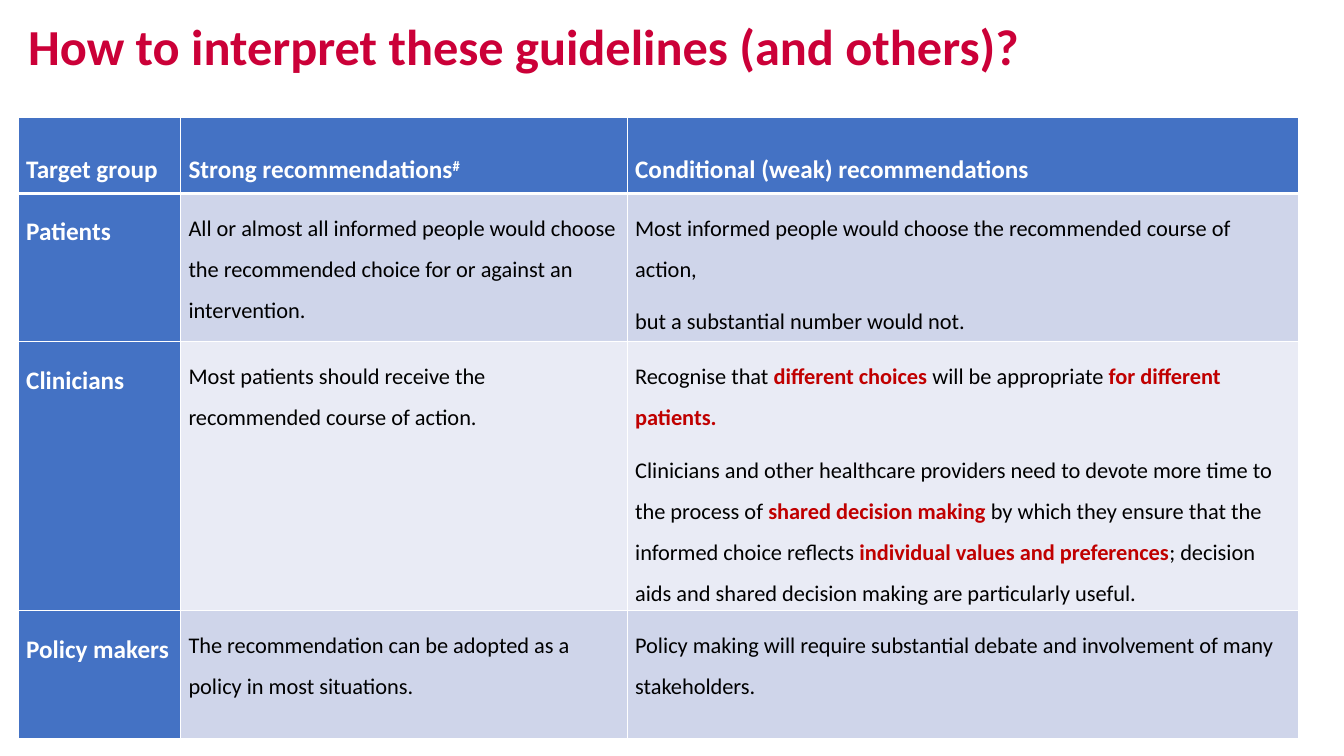
from dataclasses import dataclass

from lxml.etree import SubElement
from pptx import Presentation
from pptx.dml.color import RGBColor
from pptx.enum.text import MSO_ANCHOR
from pptx.oxml.ns import qn
from pptx.slide import Slide
from pptx.table import Table, _Cell
from pptx.text.text import _Paragraph
from pptx.util import Inches, Pt


@dataclass(frozen=True)
class Theme:
    font: str = "Calibri"
    title_size: int = 36
    label_size: int = 18
    body_size: int = 16
    title: str = "CB0038"
    label: str = "FFFFFF"
    body: str = "000000"
    emphasis: str = "C00000"
    heading_fill: str = "4472C4"
    bands: tuple[str, str] = ("CFD5EA", "E9EBF5")
    border: str = "FFFFFF"
    border_width: float = 1
    header_rule: float = 3


@dataclass(frozen=True)
class Span:
    text: str
    strong: bool = False
    raised: bool = False


@dataclass(frozen=True)
class Row:
    height: float
    group: list[list[Span]]
    strong: list[list[Span]]
    conditional: list[list[Span]]


THEME = Theme()
COLUMN_WIDTHS = (1.61, 4.43, 6.66)
CELL_INSET = 0.08


def plain(*texts: str) -> list[list[Span]]:
    return [[Span(text)] for text in texts]


ROWS = [
    Row(
        0.76,
        plain("Target group"),
        [[Span("Strong recommendations"), Span("#", raised=True)]],
        plain("Conditional (weak) recommendations"),
    ),
    Row(
        1.27,
        plain("Patients"),
        plain("All or almost all informed people would choose the recommended "
              "choice for or against an intervention."),
        plain("Most informed people would choose the recommended course of action,",
              "but a substantial number would not."),
    ),
    Row(
        2.29,
        plain("Clinicians"),
        plain("Most patients should receive the recommended course of action."),
        [
            [
                Span("Recognise that "),
                Span("different choices ", strong=True),
                Span("will be appropriate "),
                Span("for different patients.", strong=True),
            ],
            [
                Span("Clinicians and other healthcare providers need to devote "
                     "more time to the process of "),
                Span("shared decision making ", strong=True),
                Span("by which they ensure that the informed choice reflects "),
                Span("individual values and preferences", strong=True),
                Span("; decision aids and shared decision making are "
                     "particularly useful."),
            ],
        ],
    ),
    Row(
        1.27,
        plain("Policy makers"),
        plain("The recommendation can be adopted as a policy in most situations."),
        plain("Policy making will require substantial debate and involvement of "
              "many stakeholders."),
    ),
]


def set_font(paragraph: _Paragraph, size: int, color: str, bold: bool) -> None:
    font = paragraph.font
    font.name = THEME.font
    font.size = Pt(size)
    font.bold = bold
    font.color.rgb = RGBColor.from_string(color)


def add_title(page: Slide, text: str) -> None:
    box = page.shapes.add_textbox(Inches(0.18), Inches(0.11), Inches(11.25), Inches(0.76))
    frame = box.text_frame
    frame.word_wrap = True
    frame.vertical_anchor = MSO_ANCHOR.MIDDLE
    paragraph = frame.paragraphs[0]
    paragraph.text = text
    paragraph.line_spacing = 0.9
    set_font(paragraph, THEME.title_size, THEME.title, True)


def set_borders(cell: _Cell, top: float, bottom: float) -> None:
    properties = cell._tc.get_or_add_tcPr()
    side = THEME.border_width
    for tag, width in (("lnL", side), ("lnR", side), ("lnT", top), ("lnB", bottom)):
        line = SubElement(properties, qn(f"a:{tag}"), w=str(Pt(width)))
        fill = SubElement(line, qn("a:solidFill"))
        SubElement(fill, qn("a:srgbClr"), val=THEME.border)


def write_cell(cell: _Cell, paragraphs: list[list[Span]], heading: bool) -> None:
    frame = cell.text_frame
    for index, spans in enumerate(paragraphs):
        paragraph = frame.add_paragraph() if index else frame.paragraphs[0]
        paragraph.line_spacing = 1.5
        paragraph.space_after = Pt(8)
        if heading:
            set_font(paragraph, THEME.label_size, THEME.label, True)
        else:
            set_font(paragraph, THEME.body_size, THEME.body, False)
        for span in spans:
            run = paragraph.add_run()
            run.text = span.text
            if span.strong:
                run.font.bold = True
                run.font.color.rgb = RGBColor.from_string(THEME.emphasis)
            if span.raised:
                run._r.get_or_add_rPr().set("baseline", "30000")


def fill_row(table: Table, index: int, row: Row) -> None:
    table.rows[index].height = Inches(row.height)
    top = THEME.header_rule if index == 1 else THEME.border_width
    bottom = THEME.header_rule if index == 0 else THEME.border_width
    for column, paragraphs in enumerate((row.group, row.strong, row.conditional)):
        cell = table.cell(index, column)
        heading = index == 0 or column == 0
        cell.margin_left = cell.margin_right = Inches(CELL_INSET)
        cell.margin_top = cell.margin_bottom = Inches(CELL_INSET)
        cell.vertical_anchor = MSO_ANCHOR.BOTTOM if index == 0 else MSO_ANCHOR.TOP
        set_borders(cell, top, bottom)
        color = THEME.heading_fill if heading else THEME.bands[(index - 1) % 2]
        cell.fill.solid()
        cell.fill.fore_color.rgb = RGBColor.from_string(color)
        write_cell(cell, paragraphs, heading)


def add_guideline_table(page: Slide) -> None:
    table = page.shapes.add_table(
        len(ROWS), len(COLUMN_WIDTHS), Inches(0.18), Inches(1.16),
        Inches(sum(COLUMN_WIDTHS)), Inches(sum(row.height for row in ROWS)),
    ).table
    table.first_col = True
    for column, width in zip(table.columns, COLUMN_WIDTHS):
        column.width = Inches(width)
    for index, row in enumerate(ROWS):
        fill_row(table, index, row)


def main() -> None:
    deck = Presentation()
    deck.slide_width = Inches(13.33)
    deck.slide_height = Inches(7.5)
    page = deck.slides.add_slide(deck.slide_layouts[6])
    add_title(page, "How to interpret these guidelines (and others)?")
    add_guideline_table(page)
    deck.save("out.pptx")


if __name__ == "__main__":
    main()
